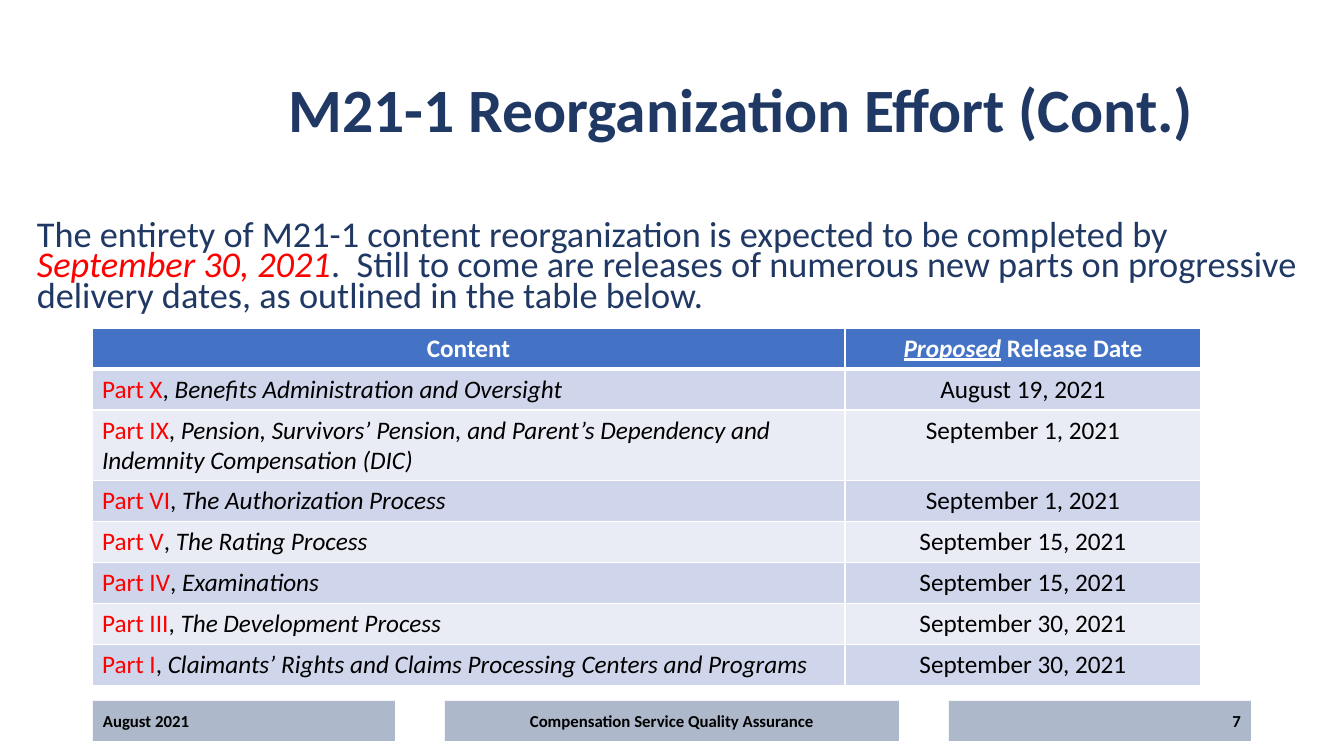
from lxml import etree
from pptx import Presentation
from pptx import util as u
from pptx.dml.color import RGBColor
from pptx.enum import shapes, text
from pptx.oxml import ns

PX = 914400 / 100.8
NAVY = RGBColor(0x20, 0x38, 0x64)
RED = RGBColor(0xFF, 0x00, 0x00)
BLACK = RGBColor(0x00, 0x00, 0x00)
WHITE = RGBColor(0xFF, 0xFF, 0xFF)
BLUE = RGBColor(0x44, 0x72, 0xC4)
BANDS = [RGBColor(0xCF, 0xD5, 0xEA), RGBColor(0xE9, 0xEB, 0xF5)]
FOOTER_GRAY = RGBColor(0xAD, 0xB9, 0xCA)
LEFT, CENTER, RIGHT = text.PP_ALIGN.LEFT, text.PP_ALIGN.CENTER, text.PP_ALIGN.RIGHT


def px(*lengths):
    return [u.Emu(round(length * PX)) for length in lengths]


def write(para, spans, size, color, align=LEFT, bold=False):
    para.alignment = align
    para.font.name = "Calibri"
    para.font.size = u.Pt(size)
    para.font.bold = bold
    para.font.color.rgb = color
    for words, style in spans:
        span = para.add_run()
        span.text = words
        if "red" in style:
            span.font.color.rgb = RED
        if "italic" in style:
            span.font.italic = True
        if "underline" in style:
            span.font.underline = True


deck = Presentation()
deck.slide_width, deck.slide_height = px(1344, 756)
page = deck.slides.add_slide(deck.slide_layouts[6])

title = page.shapes.add_textbox(*px(232, 40, 1019, 146)).text_frame
title.word_wrap = True
title.vertical_anchor = text.MSO_ANCHOR.MIDDLE
title.paragraphs[0].line_spacing = 0.9
write(title.paragraphs[0], [("M21-1 Reorganization Effort (Cont.)", "")], 44, NAVY, CENTER, True)

intro = page.shapes.add_textbox(*px(27, 218, 1287, 146)).text_frame
intro.word_wrap = True
intro.paragraphs[0].line_spacing = 0.7
intro.paragraphs[0].space_before = u.Pt(10)
write(intro.paragraphs[0], [
    ("The entirety of M21-1 content reorganization is expected to be completed by ", ""),
    ("September 30, 2021", "red italic"),
    (".  Still to come are releases of numerous new parts on progressive "
     "delivery dates, as outlined in the table below.", ""),
], 25.9, NAVY)

footers = [
    (93, 302, "August 2021", LEFT),
    (445, 454, "Compensation Service Quality Assurance", CENTER),
    (949, 302, "7", RIGHT),
]
for left, width, words, align in footers:
    box = page.shapes.add_shape(shapes.MSO_SHAPE.RECTANGLE, *px(left, 701, width, 40))
    box.shadow.inherit = False
    box.fill.solid()
    box.fill.fore_color.rgb = FOOTER_GRAY
    box.line.fill.background()
    box.text_frame.vertical_anchor = text.MSO_ANCHOR.MIDDLE
    write(box.text_frame.paragraphs[0], [(words, "")], 12, BLACK, align, True)

releases = [
    ("Part X", "Benefits Administration and Oversight", "August 19, 2021"),
    ("Part IX", "Pension, Survivors’ Pension, and Parent’s Dependency and "
     "Indemnity Compensation (DIC)", "September 1, 2021"),
    ("Part VI", "The Authorization Process", "September 1, 2021"),
    ("Part V", "The Rating Process", "September 15, 2021"),
    ("Part IV", "Examinations", "September 15, 2021"),
    ("Part III", "The Development Process", "September 30, 2021"),
    ("Part I", "Claimants’ Rights and Claims Processing Centers and Programs",
     "September 30, 2021"),
]
rows = [([("Content", "")], [("Proposed", "italic underline"), (" Release Date", "")])]
for part, name, date in releases:
    rows.append(([(part, "red"), (", ", ""), (name, "italic")], [(date, "")]))

table = page.shapes.add_table(len(rows), 2, *px(92, 328, 1109, 328)).table
table.columns[0].width, table.columns[1].width = px(753, 356)
for r, row in enumerate(rows):
    header = r == 0
    table.rows[r].height = px(41)[0]
    for c, spans in enumerate(row):
        cell = table.cell(r, c)
        write(cell.text_frame.paragraphs[0], spans, 18, WHITE if header else BLACK,
              CENTER if header or c == 1 else LEFT, header)
        for place, side in enumerate(["lnL", "lnR", "lnT", "lnB"]):
            thick = (header and side == "lnB") or (r == 1 and side == "lnT")
            border = etree.Element(ns.qn("a:" + side), w=str(u.Pt(3 if thick else 1)))
            paint = etree.SubElement(border, ns.qn("a:solidFill"))
            etree.SubElement(paint, ns.qn("a:srgbClr"), val=str(WHITE))
            cell._tc.get_or_add_tcPr().insert(place, border)
        cell.fill.solid()
        cell.fill.fore_color.rgb = BLUE if header else BANDS[(r - 1) % 2]

deck.save("out.pptx")
